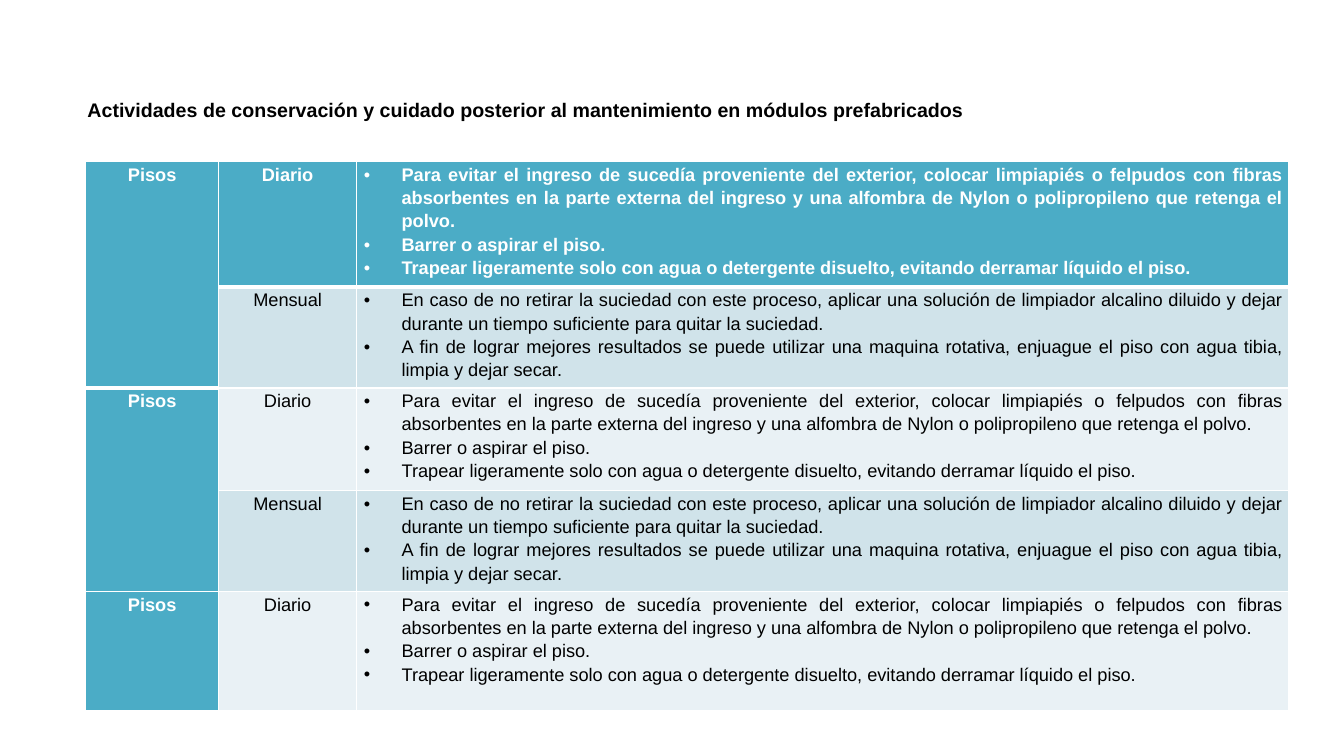
from lxml.etree import SubElement
from pptx import Presentation
from pptx.dml.color import RGBColor
from pptx.enum.text import PP_ALIGN
from pptx.oxml.ns import qn
from pptx.util import Pt

COLORS = {"head": "4BACC6", "dark": "D0E3EA", "light": "E9F1F5",
          "white": "FFFFFF", "black": "000000"}
DAILY = [
    "Para evitar el ingreso de sucedía proveniente del exterior, colocar "
    "limpiapiés o felpudos con fibras absorbentes en la parte externa del "
    "ingreso y una alfombra de Nylon o polipropileno que retenga el polvo.",
    "Barrer o aspirar el piso.",
    "Trapear ligeramente solo con agua o detergente disuelto, evitando "
    "derramar líquido el piso.",
]
MONTHLY = [
    "En caso de no retirar la suciedad con este proceso, aplicar una solución "
    "de limpiador alcalino diluido y dejar durante un tiempo suficiente para "
    "quitar la suciedad.",
    "A fin de lograr mejores resultados se puede utilizar una maquina rotativa, "
    "enjuague el piso con agua tibia, limpia y dejar secar.",
]


def style(par, size, color, bold):
    for run in par.runs:
        font = run.font
        font.name, font.size, font.bold = "Arial", Pt(size), bold
        font.color.rgb = RGBColor.from_string(COLORS[color])


def border(cell, side, width):
    line = SubElement(cell._tc.get_or_add_tcPr(), qn("a:ln" + side), w=str(Pt(width)))
    fill = SubElement(line, qn("a:solidFill"))
    SubElement(fill, qn("a:srgbClr"), val=COLORS["white"])


deck = Presentation()
deck.slide_width, deck.slide_height = Pt(960), Pt(540)
slide = deck.slides.add_slide(deck.slide_layouts[6])

# Title
title = slide.shapes.add_textbox(Pt(55.4), Pt(66.2), Pt(704), Pt(24.5))
title.text_frame.word_wrap = True
title.text_frame.text = ("Actividades de conservación y cuidado posterior al "
                         "mantenimiento en módulos prefabricados")
style(title.text_frame.paragraphs[0], 14, "black", True)

# Table grid
widths = [95, 98.5, 666]
heights = [89.3, 72, 73.4, 72, 85]
frame = slide.shapes.add_table(5, 3, Pt(61.2), Pt(115.4), Pt(sum(widths)), Pt(sum(heights)))
table = frame.table
for col, width in zip(table.columns, widths):
    col.width = Pt(width)
for row, height in zip(table.rows, heights):
    row.height = Pt(height)

# Cells: floor label, how often, tasks
for r in range(5):
    daily = r % 2 == 0
    texts = [["Pisos"] if daily else [],
             ["Diario" if daily else "Mensual"],
             DAILY if daily else MONTHLY]
    for c, lines in enumerate(texts):
        cell = table.cell(r, c)
        head = r == 0 or c == 0
        cell.margin_left = cell.margin_right = Pt(5.2)
        cell.margin_top = cell.margin_bottom = Pt(0)

        # The first block of each column ends in a thick line
        last = 1 if c == 0 else 0
        for side in "LRTB":
            thick = (side, r) in [("B", last), ("T", last + 1)]
            border(cell, side, 3 if thick else 1)
        shade = "head" if head else "light" if daily else "dark"
        cell.fill.solid()
        cell.fill.fore_color.rgb = RGBColor.from_string(COLORS[shade])

        for i, line in enumerate(lines):
            text = cell.text_frame
            par = text.paragraphs[0] if i == 0 else text.add_paragraph()
            par.text = line
            if c == 2:
                props = par._p.get_or_add_pPr()
                props.set("marL", str(Pt(27)))
                props.set("indent", str(Pt(-27)))
                SubElement(props, qn("a:buFont"), typeface="Arial")
                SubElement(props, qn("a:buChar"), char="•")
                par.alignment = PP_ALIGN.JUSTIFY
            else:
                par.alignment = PP_ALIGN.CENTER
                par.space_after = Pt(10)
            par.line_spacing = 1.15
            style(par, 13, "white" if head else "black", head)

# Floor labels span daily and monthly rows
for top in (0, 2):
    table.cell(top, 0).merge(table.cell(top + 1, 0))

deck.save("out.pptx")
